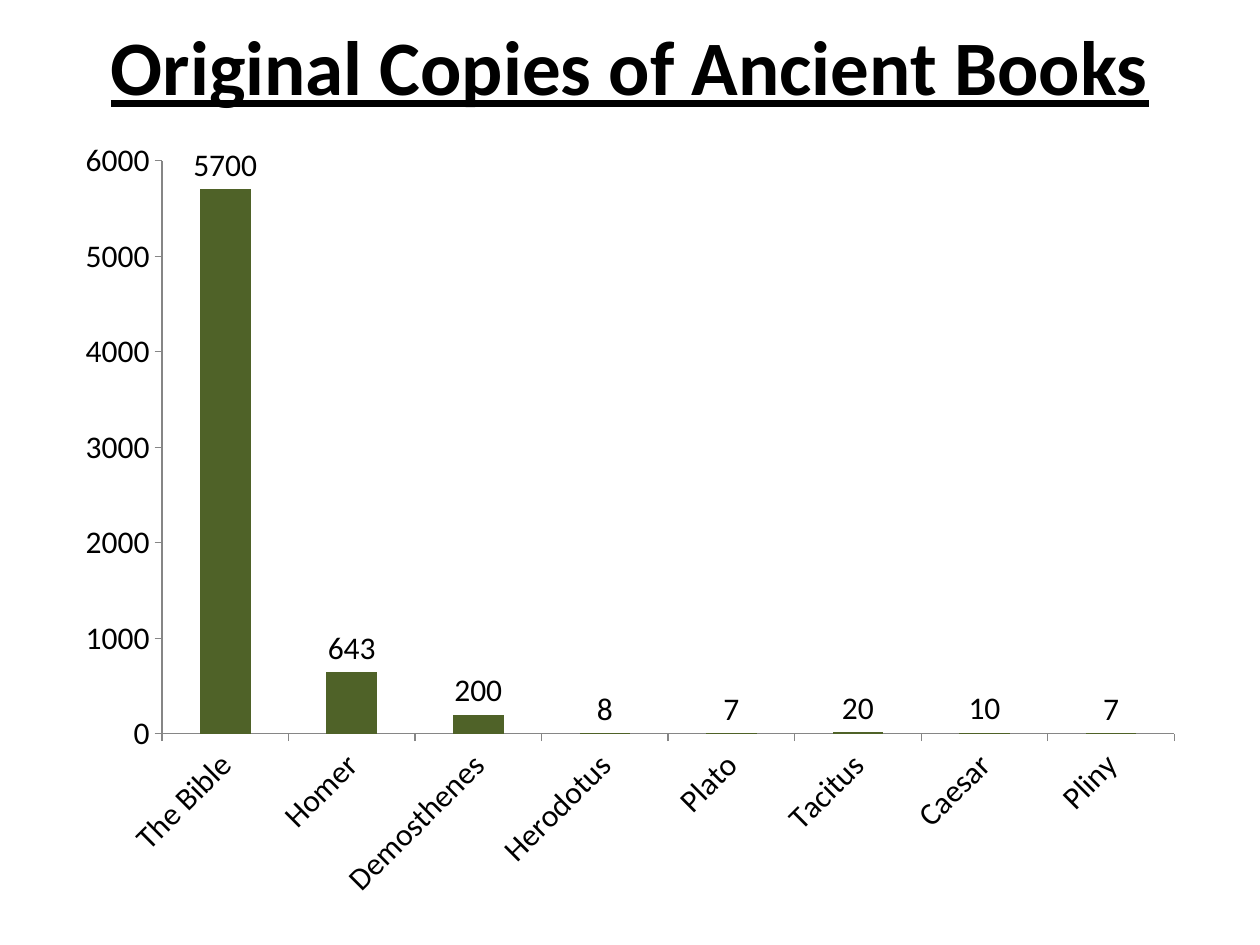
from pptx import Presentation
from pptx.chart.data import CategoryChartData
from pptx.dml.color import RGBColor
from pptx.enum.chart import XL_CHART_TYPE as ChartType
from pptx.enum.chart import XL_LABEL_POSITION as LabelPosition
from pptx.enum.chart import XL_TICK_MARK as TickMark
from pptx.enum.text import MSO_ANCHOR as Anchor
from pptx.enum.text import PP_ALIGN as Align
from pptx.util import Cm, Pt

FONT = "Calibri"
BLACK, GREEN, AXIS_GRAY = "000000", "4F6228", "868686"
COPIES = {
    "The Bible": 5700,
    "Homer": 643,
    "Demosthenes": 200,
    "Herodotus": 8,
    "Plato": 7,
    "Tacitus": 20,
    "Caesar": 10,
    "Pliny": 7,
}


def color(hex_string):
    return RGBColor.from_string(hex_string)


def format_font(font, size):
    font.name = FONT
    font.size = Pt(size)
    font.color.rgb = color(BLACK)


def place_title(slide, text, left, top, width, height):
    title = slide.shapes.title
    title.left, title.top, title.width, title.height = left, top, width, height
    frame = title.text_frame
    frame.text = text
    frame.word_wrap = True
    frame.vertical_anchor = Anchor.MIDDLE
    paragraph = frame.paragraphs[0]
    paragraph.alignment = Align.CENTER
    font = paragraph.runs[0].font
    format_font(font, 44)
    font.bold = font.underline = True


def format_axis(axis):
    axis.has_major_gridlines = False
    axis.major_tick_mark = TickMark.OUTSIDE
    axis.minor_tick_mark = TickMark.NONE
    axis.format.line.color.rgb = color(AXIS_GRAY)
    axis.format.line.width = Pt(0.75)


def add_copies_chart(slide, left, top, width, height):
    data = CategoryChartData()
    data.categories = list(COPIES)
    data.add_series("Series 1", list(COPIES.values()))
    chart = slide.shapes.add_chart(
        ChartType.COLUMN_CLUSTERED, left, top, width, height, data
    ).chart
    chart.has_title = chart.has_legend = False
    format_font(chart.font, 18)
    format_axis(chart.category_axis)
    format_axis(chart.value_axis)

    plot = chart.plots[0]
    plot.gap_width = 150
    plot.vary_by_categories = False
    fill = plot.series[0].format.fill
    fill.solid()
    fill.fore_color.rgb = color(GREEN)

    labels = plot.series[0].data_labels
    labels.show_value = True
    labels.position = LabelPosition.OUTSIDE_END
    format_font(labels.font, 18)


def main():
    presentation = Presentation()
    presentation.slide_width, presentation.slide_height = Cm(25.4), Cm(19.05)
    slide = presentation.slides.add_slide(presentation.slide_layouts[5])
    margin = Cm(1.27)
    content_width = presentation.slide_width - 2 * margin
    place_title(slide, "Original Copies of Ancient Books",
                margin, Cm(0.2), content_width, Cm(2.21))
    add_copies_chart(slide, margin, Cm(2.54), content_width, Cm(15.88))
    presentation.save("out.pptx")


if __name__ == "__main__":
    main()
